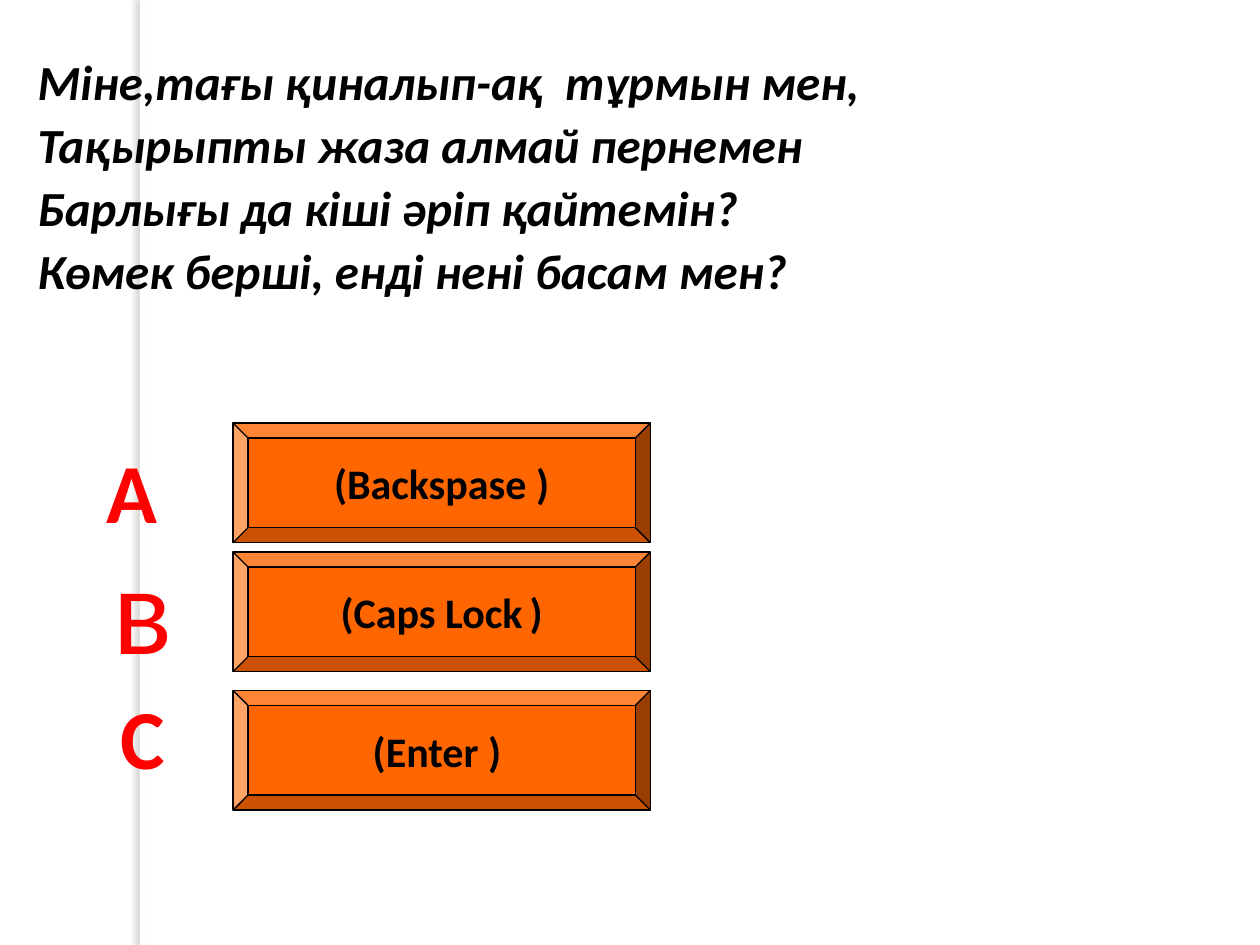
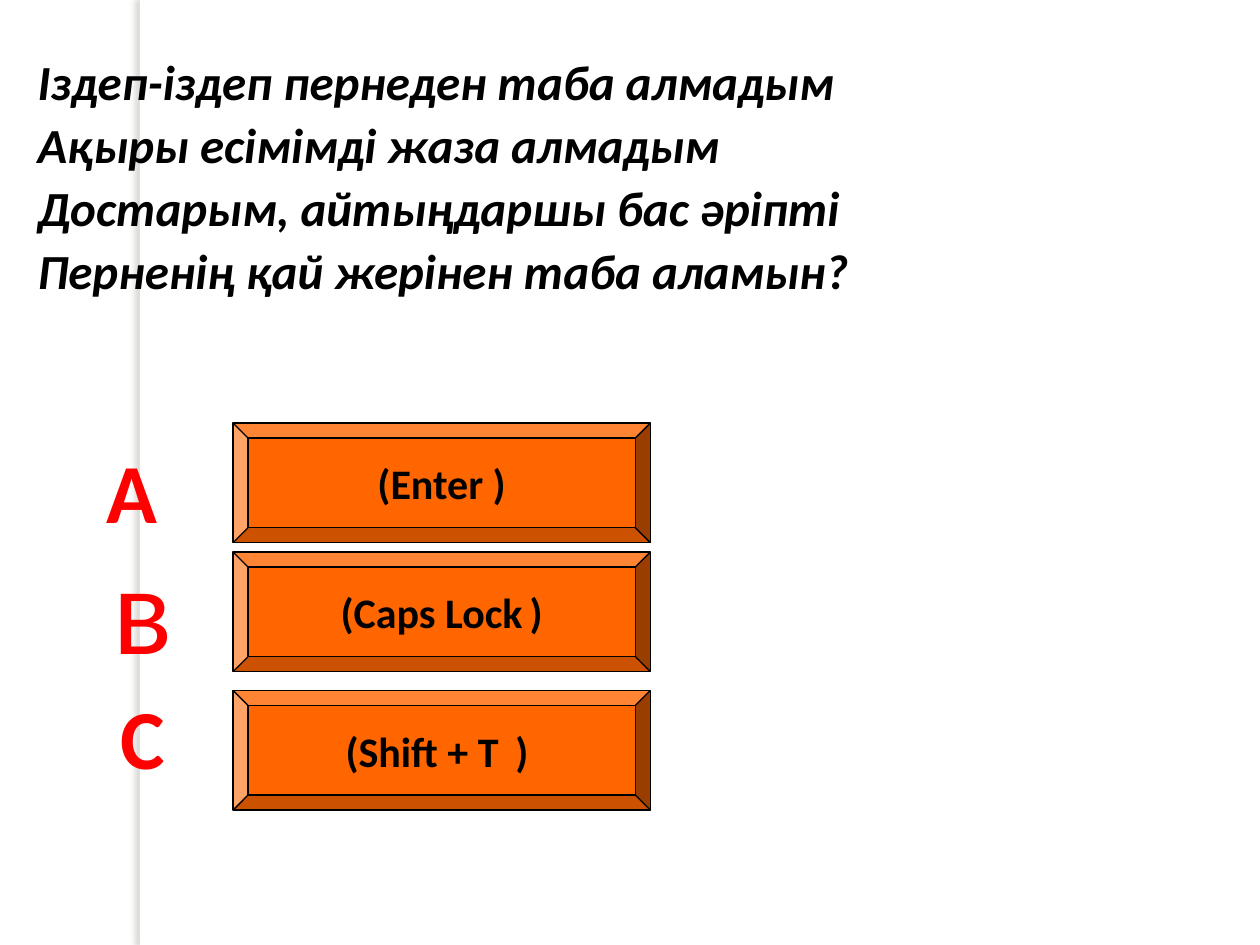
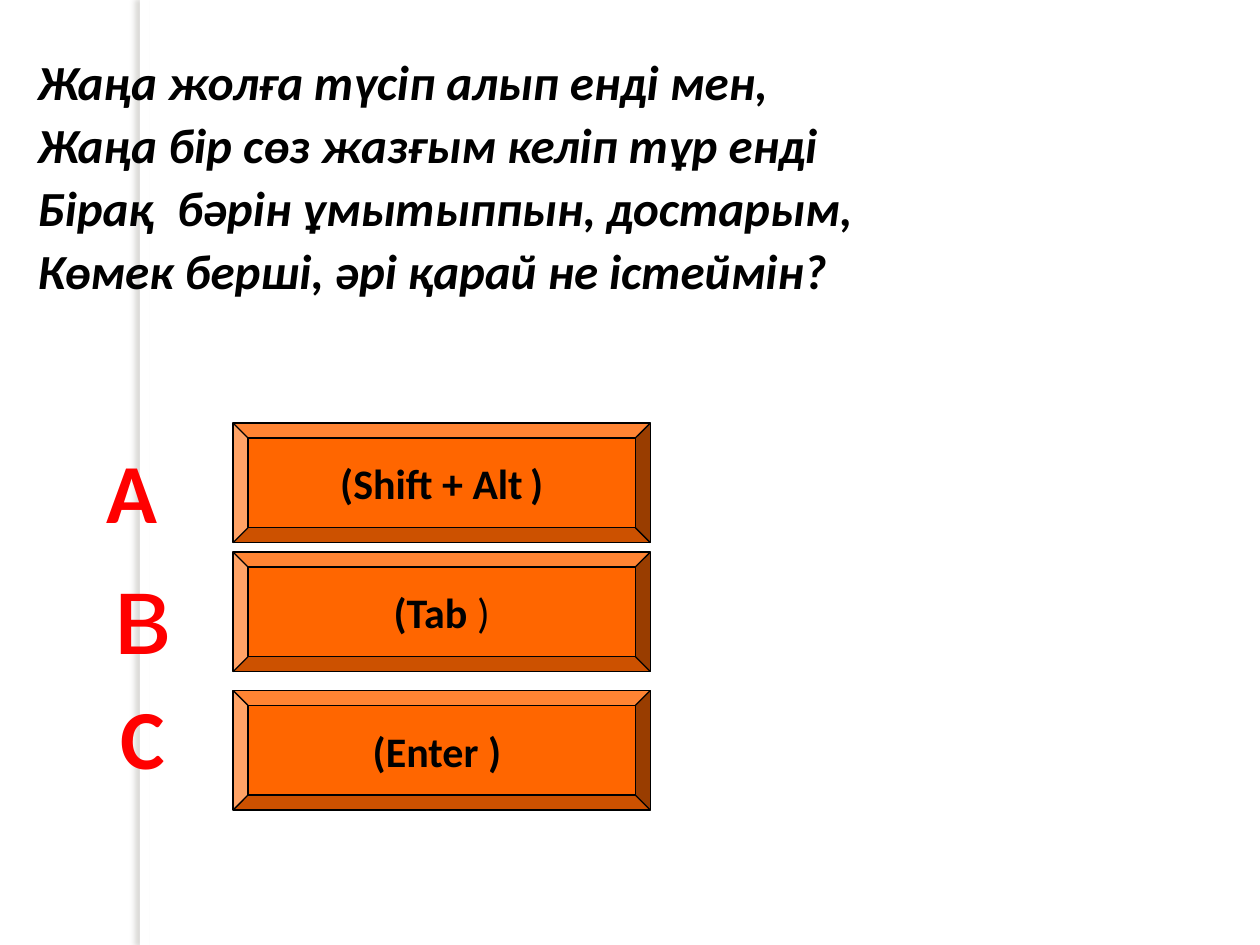
from lxml import etree
from pptx import Presentation
from pptx.dml.color import RGBColor
from pptx.enum import shapes, text
from pptx.oxml import ns
from pptx.util import Cm, Pt

FONT = "Calibri"
BLACK, WHITE, RED, ORANGE, SHADE = "000000", "FFFFFF", "FF0000", "FF6600", "736F63"

GAP = (" ", 18, False)
CLOSE = (")", 24, True)
CAPS_LOCK = [("(Caps Lock", 24, True), GAP, CLOSE]
ENTER_LAST = [("(Enter ) ", 24, True)]

QUESTIONS = [
    (
        [
            "Міне,тағы қиналып-ақ  тұрмын мен,",
            "Тақырыпты жаза алмай пернемен",
            "Барлығы да кіші әріп қайтемін?",
            "Көмек берші, енді нені басам мен?",
        ],
        [[("(Backspase )", 24, True)], CAPS_LOCK, ENTER_LAST],
    ),
    (
        [
            "Іздеп-іздеп пернеден таба алмадым",
            "Ақыры есімімді жаза алмадым",
            "Достарым, айтыңдаршы бас әріпті",
            "Перненің қай жерінен таба аламын?",
        ],
        [
            [("(Enter )", 24, True)],
            CAPS_LOCK,
            [("(Shift + Т", 24, True), GAP, (" ", 24, False), (") ", 24, True)],
        ],
    ),
    (
        [
            "Жаңа жолға түсіп алып енді мен,",
            "Жаңа бір сөз жазғым келіп тұр енді",
            "Бірақ  бәрін ұмытыппын, достарым,",
            "Көмек берші, әрі қарай не істеймін?",
        ],
        [
            [("(Shift + Alt", 24, True), GAP, CLOSE],
            [("(Tab", 24, True), (" )", 24, False)],
            ENTER_LAST,
        ],
    ),
]

KEY_TOPS = [8.53, 11.13, 13.92]
LETTERS = [
    (("А", 48, True), 1.57, 8.74, 2.31),
    (("в", 72, False), 1.78, 10.52, 3.33),
    (("С", 48, True), 1.78, 13.69, 2.31),
]


def rgb(value):
    return RGBColor.from_string(value)


def format_run(r, size, bold, color, italic=None):
    r.font.name = FONT
    r.font.size = Pt(size)
    r.font.bold = bold
    r.font.italic = italic
    r.font.color.rgb = rgb(color)


def centre_runs(tf, runs, color):
    p = tf.paragraphs[0]
    p.alignment = text.PP_ALIGN.CENTER
    for content, size, bold in runs:
        r = p.add_run()
        r.text = content
        format_run(r, size, bold, color)


def add_box(slide, left, top, width, height):
    tf = slide.shapes.add_textbox(Cm(left), Cm(top), Cm(width), Cm(height)).text_frame
    tf.word_wrap = True
    return tf


def add_band(slide, layout):
    sp = slide.shapes.add_shape(
        shapes.MSO_SHAPE.RECTANGLE, Cm(2.82), 0, Cm(0.2), Cm(19.05))
    sp.fill.solid()
    sp.fill.fore_color.rgb = rgb(WHITE)
    sp.line.fill.background()
    sp.shadow.inherit = False
    effects = sp.element.spPr.find(ns.qn("a:effectLst"))
    shadow = etree.SubElement(
        effects, ns.qn("a:outerShdw"), blurRad=str(Pt(3)), dist=str(Pt(3)),
        dir="10800000", algn="tl", rotWithShape="0")
    color = etree.SubElement(shadow, ns.qn("a:srgbClr"), val=SHADE)
    etree.SubElement(color, ns.qn("a:alpha"), val="25000")
    layout.shapes.element.append(sp.element)


def add_verse(slide, lines):
    tf = add_box(slide, 0.51, 0.91, 24, 16)
    tf.text = "\n".join(lines)
    for p in tf.paragraphs:
        p.space_before = Pt(2.5)
        pPr = p._p.get_or_add_pPr()
        pPr.set("marL", str(Cm(0.74)))
        pPr.set("indent", str(-Cm(0.74)))
        format_run(p.runs[0], 28, True, BLACK, italic=True)


def add_key(slide, top, runs):
    sp = slide.shapes.add_shape(
        shapes.MSO_SHAPE.BEVEL, Cm(4.7), Cm(top), Cm(8.41), Cm(2.41))
    sp.shadow.inherit = False
    sp.fill.solid()
    sp.fill.fore_color.rgb = rgb(ORANGE)
    sp.line.color.rgb = rgb(BLACK)
    sp.line.width = Pt(0.75)
    tf = sp.text_frame
    tf.word_wrap = False
    tf.vertical_anchor = text.MSO_ANCHOR.MIDDLE
    centre_runs(tf, runs, BLACK)


def add_letter(slide, run, left, top, height):
    tf = add_box(slide, left, top, 2.18, height)
    tf.auto_size = text.MSO_AUTO_SIZE.SHAPE_TO_FIT_TEXT
    centre_runs(tf, [run], RED)


def main():
    prs = Presentation()
    prs.slide_width, prs.slide_height = Cm(25.4), Cm(19.05)
    layout = prs.slide_layouts[6]
    for number, (verse, keys) in enumerate(QUESTIONS):
        slide = prs.slides.add_slide(layout)
        if number == 0:
            add_band(slide, layout)
        add_verse(slide, verse)
        for top, runs in zip(KEY_TOPS, keys):
            add_key(slide, top, runs)
        for letter in LETTERS:
            add_letter(slide, *letter)
    prs.save("out.pptx")


if __name__ == "__main__":
    main()
